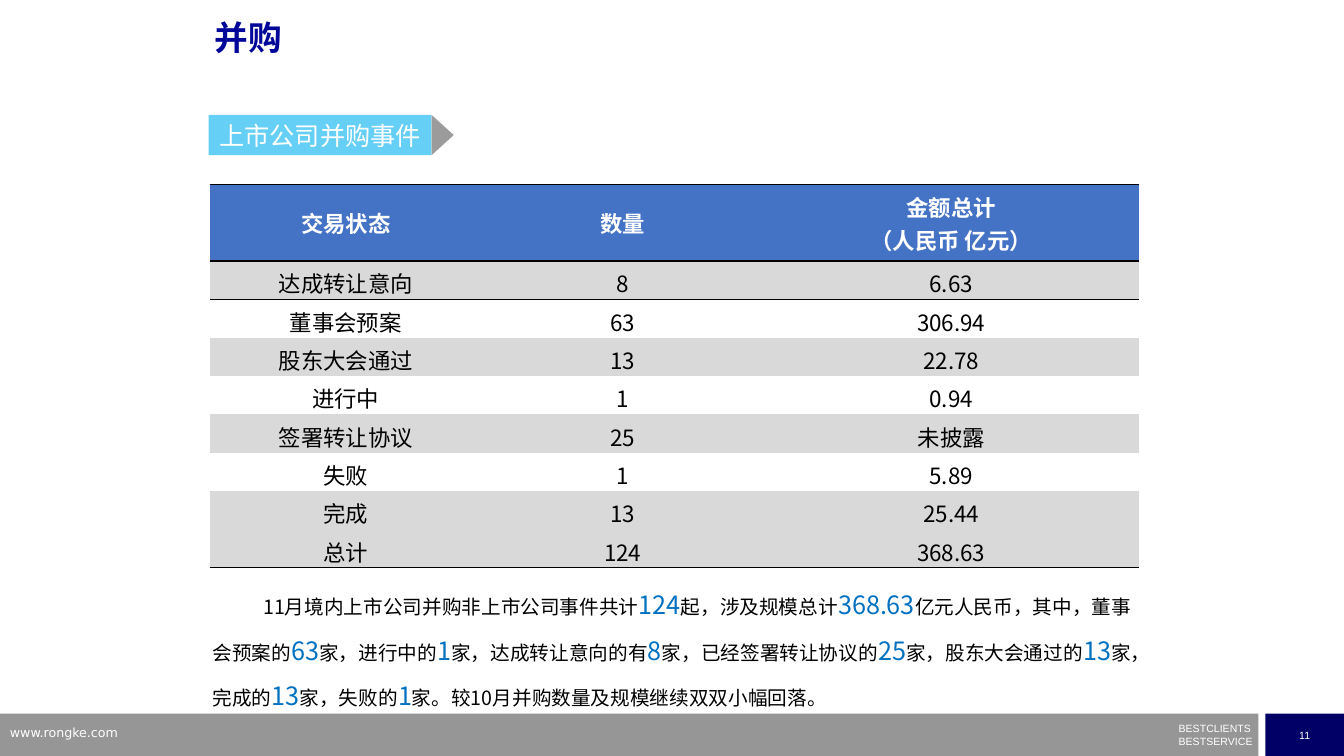
"""Build the slide on merger events of listed companies."""
from lxml import etree
from pptx import Presentation
from pptx.dml.color import RGBColor
from pptx.enum.shapes import MSO_SHAPE
from pptx.enum.text import MSO_ANCHOR, MSO_AUTO_SIZE, PP_ALIGN
from pptx.oxml.ns import qn
from pptx.util import Inches, Pt

RECT, TRIANGLE = MSO_SHAPE.RECTANGLE, MSO_SHAPE.ISOSCELES_TRIANGLE
MIDDLE, BOTTOM = MSO_ANCHOR.MIDDLE, MSO_ANCHOR.BOTTOM
LEFT, CENTER = PP_ALIGN.LEFT, PP_ALIGN.CENTER
FIT_SHAPE = MSO_AUTO_SIZE.SHAPE_TO_FIT_TEXT

WHITE = RGBColor(0xFF, 0xFF, 0xFF)
BLACK = RGBColor(0, 0, 0)
GRAY = RGBColor(0x96, 0x96, 0x96)
DARK_GRAY = RGBColor(0x59, 0x59, 0x59)
BAND = RGBColor(0xD9, 0xD9, 0xD9)
NAVY = RGBColor(0, 0, 0x66)
TITLE_BLUE = RGBColor(0, 0x07, 0x98)
SKY = RGBColor(0, 0xB0, 0xF0)
HEADER_BLUE = RGBColor(0x44, 0x72, 0xC4)
FIGURE_BLUE = RGBColor(0, 0x70, 0xC0)

CJK, ARIAL, DEJAVU = "Noto Sans CJK SC", "Arial", "DejaVu Sans"
NO_STYLE = "{2D5ABB26-0587-4C30-8999-92F81FD0307C}"

COLUMNS = [2.7, 2.79, 3.73]
HEADER_HEIGHT, ROW_HEIGHT = 0.76, 0.38
ROWS = [
    ("交易状态", "数量", "金额总计\v（人民币 亿元）"),
    ("达成转让意向", "8", "6.63"),
    ("董事会预案", "63", "306.94"),
    ("股东大会通过", "13", "22.78"),
    ("进行中", "1", "0.94"),
    ("签署转让协议", "25", "未披露"),
    ("失败", "1", "5.89"),
    ("完成", "13", "25.44"),
    ("总计", "124", "368.63"),
]
SUMMARY = [
    "11月境内上市公司并购非上市公司事件共计", "124", "起，涉及规模总计", "368.63",
    "亿元人民币，其中，董事会预案的", "63", "家，进行中的", "1",
    "家，达成转让意向的有", "8", "家，已经签署转让协议的", "25",
    "家，股东大会通过的", "13", "家，完成的", "13", "家，失败的", "1",
    "家。较10月并购数量及规模继续双双小幅回落。",
]


class SlideBuilder:
    """Hold the current slide and its style."""

    def __init__(self, slide):
        self.s = slide

    def style(self, p, size, color, font=CJK, bold=False, align=LEFT):
        p.alignment = align
        p.font.size = Pt(size)
        p.font.bold = bold
        p.font.name = font
        p.font.color.rgb = color

    def shape(self, kind, box, color, opacity=100, rotation=0):
        sp = self.s.shapes.add_shape(kind, *map(Inches, box))
        sp.shadow.inherit = False
        sp.fill.solid()
        sp.fill.fore_color.rgb = color
        sp.line.fill.background()
        sp.rotation = rotation
        if opacity < 100:
            clr = sp.fill._xPr.find(".//" + qn("a:srgbClr"))
            etree.SubElement(clr, qn("a:alpha")).set("val", str(opacity * 1000))
        return sp

    def label(self, sp, text, size, font=CJK, wrap=True):
        tf = sp.text_frame
        tf.word_wrap = wrap
        tf.vertical_anchor = MIDDLE
        tf.text = text
        self.style(tf.paragraphs[0], size, WHITE, font, align=CENTER)

    def text(self, box, lines, size, color, font, bold=False, spacing=1.0, before=0, tight=False):
        tf = self.s.shapes.add_textbox(*map(Inches, box)).text_frame
        tf.word_wrap = True
        if tight:
            tf.margin_left = tf.margin_right = tf.margin_top = tf.margin_bottom = 0
            tf.auto_size = FIT_SHAPE
        tf.text = "\n".join(lines)
        for i, p in enumerate(tf.paragraphs):
            p.line_spacing = spacing
            if i:
                p.space_before = Pt(before)
            self.style(p, size, color, font, bold)
        return tf

    def summary(self, box, parts):
        p = self.text(box, [], 14, BLACK, CJK, spacing=1.5, tight=True).paragraphs[0]
        p._p.get_or_add_pPr().set("indent", str(Inches(0.5)))
        for i, part in enumerate(parts):
            r = p.add_run()
            r.text = part
            r.font.size = Pt(18 if i % 2 else 14)
            r.font.color.rgb = FIGURE_BLUE if i % 2 else BLACK

    def border(self, cell, side):
        ln = etree.Element(qn("a:" + side), w=str(Pt(1)))
        fill = etree.SubElement(ln, qn("a:solidFill"))
        etree.SubElement(fill, qn("a:srgbClr"), val=str(BLACK))
        cell._tc.get_or_add_tcPr().insert(0, ln)

    def table(self, left, top, rows):
        height = HEADER_HEIGHT + ROW_HEIGHT * (len(rows) - 1)
        frame = self.s.shapes.add_table(
            len(rows), len(COLUMNS), Inches(left), Inches(top), Inches(sum(COLUMNS)), Inches(height))
        tbl = frame.table
        tbl._tbl.tblPr.find(qn("a:tableStyleId")).text = NO_STYLE
        tbl.horz_banding = False
        for column, width in zip(tbl.columns, COLUMNS):
            column.width = Inches(width)
        last = len(rows) - 1
        for i, row in enumerate(rows):
            tbl.rows[i].height = Inches(ROW_HEIGHT if i else HEADER_HEIGHT)
            for j, value in enumerate(row):
                cell = tbl.cell(i, j)
                cell.margin_left = cell.margin_right = cell.margin_top = Inches(0.01)
                cell.margin_bottom = 0
                cell.vertical_anchor = BOTTOM if i else MIDDLE
                if i % 2 or i in (0, last):
                    cell.fill.solid()
                    cell.fill.fore_color.rgb = BAND if i else HEADER_BLUE
                else:
                    cell.fill.background()
                if i in (0, last):
                    self.border(cell, "lnB")
                if i in (0, 1):
                    self.border(cell, "lnT")
                cell.text = value
                for p in cell.text_frame.paragraphs:
                    self.style(p, 16, BLACK if i else WHITE, bold=i == 0, align=CENTER)


def main():
    prs = Presentation()
    prs.slide_width, prs.slide_height = Inches(13.33), Inches(7.5)
    b = SlideBuilder(prs.slides.add_slide(prs.slide_layouts[6]))

    b.shape(RECT, (0, 7.08, 12.48, 0.42), GRAY)
    page = b.shape(RECT, (12.55, 7.08, 0.78, 0.42), NAVY)
    b.label(page, "11", 7.5, ARIAL, wrap=False)
    b.text((11.69, 7.22, 0.76, 0.2), ["BESTCLIENTS", "BESTSERVICE"], 7.5, WHITE, ARIAL,
           spacing=0.5, before=4.3, tight=True)
    b.text((0, 7.14, 3.2, 0.26), ["www.rongke.com"], 9, WHITE, DEJAVU)

    banner = b.shape(RECT, (2.07, 1.14, 2.21, 0.4), SKY, opacity=60)
    b.label(banner, "上市公司并购事件", 18)
    b.shape(TRIANGLE, (4.19, 1.23, 0.4, 0.22), DARK_GRAY, opacity=60, rotation=90)

    b.text((2.03, 0.16, 9, 0.7), ["并购"], 24, TITLE_BLUE, ARIAL, bold=True, spacing=0.9)
    b.summary((2.11, 5.7, 9.19, 1.31), SUMMARY)
    b.table(2.08, 1.83, ROWS)
    prs.save("out.pptx")


if __name__ == "__main__":
    main()
